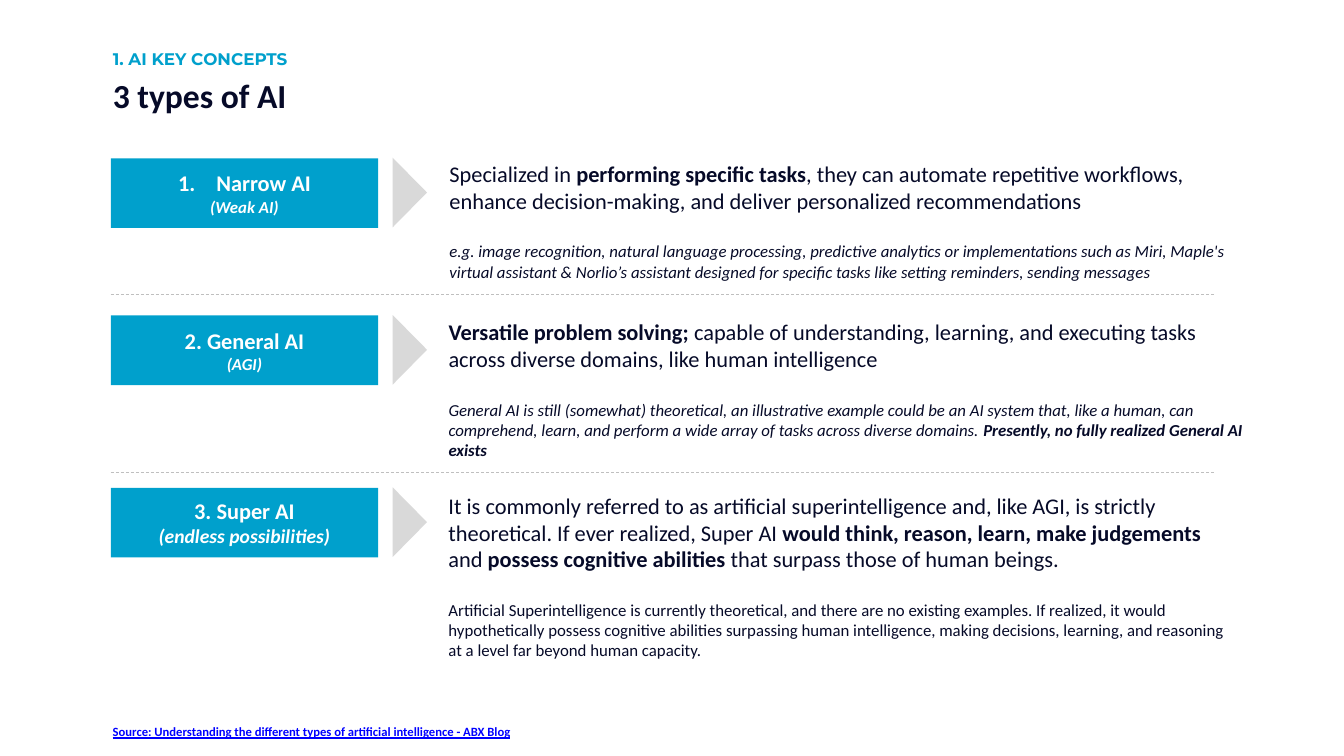
from lxml.etree import SubElement
from pptx import Presentation
from pptx.dml.color import RGBColor
from pptx.enum.dml import MSO_LINE
from pptx.enum.shapes import MSO_CONNECTOR, MSO_SHAPE
from pptx.enum.text import MSO_ANCHOR, PP_ALIGN
from pptx.oxml.ns import qn
from pptx.util import Pt

EMU_PER_PX = 9144
COLORS = {
    "ink": "060A28",
    "accent": "00A0CC",
    "white": "FFFFFF",
    "arrow": "D9D9D9",
    "divider": "BFBFBF",
    "link": "0000FF",
}


def px(*lengths):
    return [length * EMU_PER_PX for length in lengths]


def rgb(name):
    return RGBColor.from_string(COLORS[name])


class SlideBuilder:
    body_font = "Calibri"
    label_left, label_width, label_height = 110, 265, 69
    arrow_left, arrow_depth = 372, 34

    def __init__(self, slide):
        self.slide = slide

    def fill_text(self, paragraph, text, size, color="ink", font=None, bold=None, italic=None):
        """Fill a paragraph; parts between ** marks are bold."""
        paragraph.font.size = Pt(size)
        paragraph.font.name = font or self.body_font
        paragraph.font.color.rgb = rgb(color)
        paragraph.font.bold = bold
        paragraph.font.italic = italic
        for index, part in enumerate(text.split("**")):
            if part:
                run = paragraph.add_run()
                run.text = part
                if index % 2:
                    run.font.bold = True

    def text_box(self, left, top, width, height):
        frame = self.slide.shapes.add_textbox(*px(left, top, width, height)).text_frame
        frame.word_wrap = True
        return frame

    def shape(self, kind, left, top, width, height, color):
        shape = self.slide.shapes.add_shape(kind, *px(left, top, width, height))
        shape.shadow.inherit = False
        shape.fill.solid()
        shape.fill.fore_color.rgb = rgb(color)
        shape.line.fill.background()
        return shape

    def label(self, top, name, note, note_size, numbered):
        box = self.shape(MSO_SHAPE.RECTANGLE, self.label_left, top,
                         self.label_width, self.label_height, "accent")
        frame = box.text_frame
        frame.word_wrap = True
        frame.vertical_anchor = MSO_ANCHOR.MIDDLE
        heading, remark = frame.paragraphs[0], frame.add_paragraph()
        heading.alignment = remark.alignment = PP_ALIGN.CENTER
        if numbered:
            self.number(heading)
        self.fill_text(heading, name, 16, "white", bold=True)
        self.fill_text(remark, note, note_size, "white", bold=True, italic=True)

    def number(self, paragraph):
        indent, = px(38)
        properties = paragraph._p.get_or_add_pPr()
        properties.set("marL", str(indent))
        properties.set("indent", str(-indent))
        SubElement(properties, qn("a:buFont"), typeface="+mj-lt")
        SubElement(properties, qn("a:buAutoNum"), type="arabicPeriod")

    def arrow(self, label_top):
        # The triangle is turned a quarter, so its box is centred on the label
        top = label_top + (self.label_height - self.arrow_depth) // 2
        triangle = self.shape(MSO_SHAPE.ISOSCELES_TRIANGLE, self.arrow_left, top,
                              self.label_height, self.arrow_depth, "arrow")
        triangle.rotation = 90

    def description(self, box, summary, detail, italic):
        frame = self.text_box(*box)
        self.fill_text(frame.paragraphs[0], summary, 16)
        paragraph = frame.add_paragraph()
        paragraph.space_before = Pt(19.5)
        self.fill_text(paragraph, detail, 12, italic=italic)

    def divider(self, y):
        line = self.slide.shapes.add_connector(
            MSO_CONNECTOR.STRAIGHT, *px(self.label_left, y, 1206, y))
        line.line.color.rgb = rgb("divider")
        line.line.width = Pt(0.5)
        line.line.dash_style = MSO_LINE.DASH
        SubElement(line._element.spPr, qn("a:effectLst"))


AI_TYPES = [
    dict(
        top=157, name="Narrow AI", note="(Weak AI)", note_size=12, numbered=True,
        box=(436, 154, 823, 140), italic=True,
        summary="Specialized in **performing specific tasks**, they can automate repetitive "
                "workflows, enhance decision-making, and deliver personalized recommendations",
        detail="e.g. image recognition, natural language processing, predictive analytics or "
               "implementations such as Miri, Maple's virtual assistant & Norlio’s assistant "
               "designed for specific tasks like setting reminders, sending messages",
    ),
    dict(
        top=313, name="2. General AI", note="(AGI)", note_size=12, numbered=False,
        box=(435, 311, 812, 155), italic=True,
        summary="**Versatile problem solving;** capable of understanding, learning, and "
                "executing tasks across diverse domains, like human intelligence",
        detail="General AI is still (somewhat) theoretical, an illustrative example could be "
               "an AI system that, like a human, can comprehend, learn, and perform a wide "
               "array of tasks across diverse domains. "
               "**Presently, no fully realized General AI exists**",
    ),
    dict(
        top=484, name="3. Super AI", note="(endless possibilities)", note_size=14,
        numbered=False, box=(435, 483, 803, 214), italic=None,
        summary="It is commonly referred to as artificial superintelligence and, like AGI, is "
                "strictly theoretical. If ever realized, Super AI **would think, reason, "
                "learn, make judgements **and **possess cognitive abilities **that surpass "
                "those of human beings.",
        detail="Artificial Superintelligence is currently theoretical, and there are no "
               "existing examples. If realized, it would hypothetically possess cognitive "
               "abilities surpassing human intelligence, making decisions, learning, and "
               "reasoning at a level far beyond human capacity.",
    ),
]


def main():
    presentation = Presentation()
    presentation.slide_width, presentation.slide_height = px(1333, 750)
    slide = presentation.slides.add_slide(presentation.slide_layouts[6])
    builder = SlideBuilder(slide)

    # Section name and title
    section = builder.text_box(102, 46, 405, 23).paragraphs[0]
    title = builder.text_box(102, 74, 1145, 66).paragraphs[0]
    section.line_spacing = title.line_spacing = 0.9
    builder.fill_text(section, "1. AI KEY CONCEPTS", 12, "accent", "Montserrat", bold=True)
    builder.fill_text(title, "3 types of AI", 24, bold=True)

    # One row per type of AI
    for row in AI_TYPES:
        builder.label(row["top"], row["name"], row["note"], row["note_size"], row["numbered"])
        builder.arrow(row["top"])
        builder.description(row["box"], row["summary"], row["detail"], row["italic"])

    # Dividers between the rows
    for y in (292, 469):
        builder.divider(y)

    # Source
    frame = builder.text_box(102, 704, 1200, 44)
    frame.vertical_anchor = MSO_ANCHOR.MIDDLE
    source = frame.paragraphs[0]
    source.space_after = Pt(6)
    source.font.underline = True
    builder.fill_text(source, "Source: Understanding the different types of artificial "
                              "intelligence - ABX Blog", 9, "link", bold=True)

    presentation.save("out.pptx")


if __name__ == "__main__":
    main()
